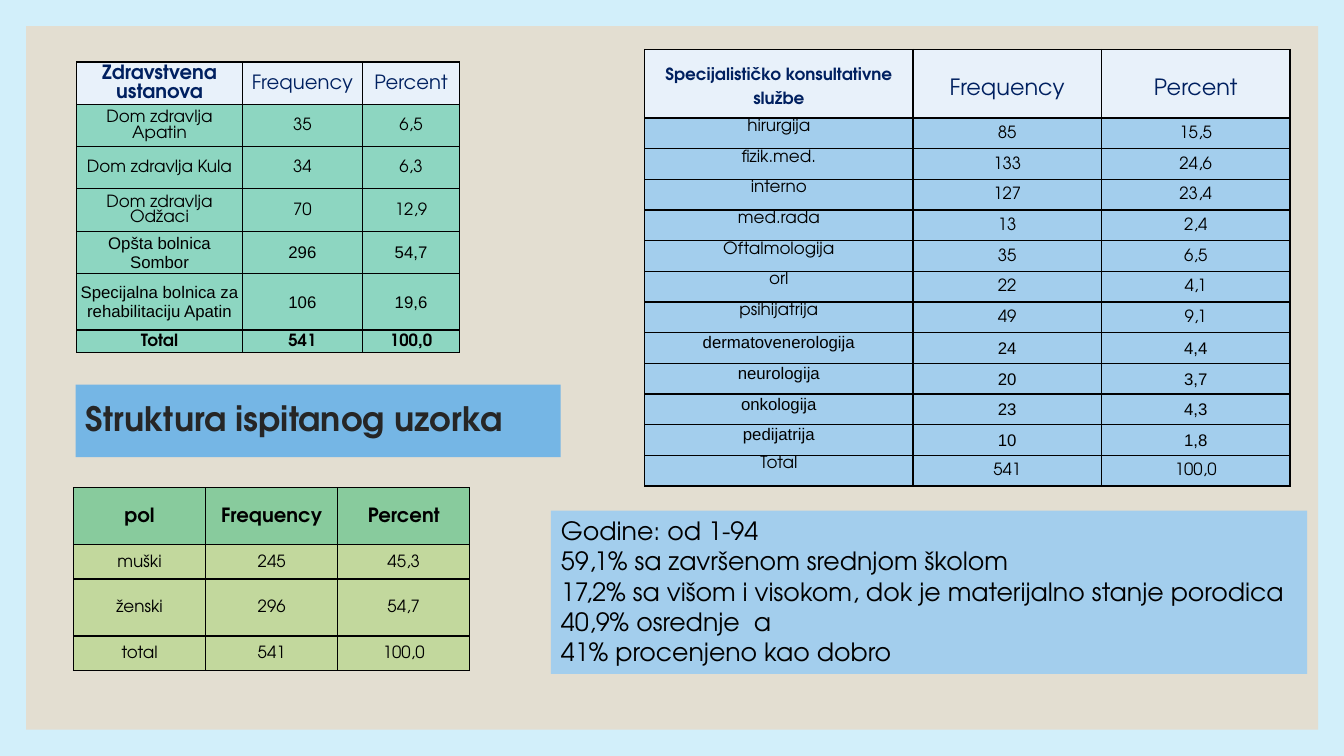
from lxml import etree
from pptx import Presentation
from pptx.dml.color import RGBColor as Rgb
from pptx.enum.shapes import MSO_SHAPE as Shape
from pptx.enum.text import MSO_ANCHOR as Anchor, MSO_AUTO_SIZE as Auto, PP_ALIGN as Align
from pptx.oxml.ns import qn
from pptx.util import Inches, Pt

THEME = {
    "sans": "TeX Gyre Adventor", "plain": "Arial",
    "sky": "D2EFFA", "sand": "E3DED1", "blue": "75B6E5", "pale": "A3CEED",
    "ice": "E8F1FA", "mint": "8DD6C1", "green": "00B050", "lime": "92D050",
    "ink": "000000", "navy": "002060", "dark": "262626",
    "title": 24, "note": 18, "large": 16, "head": 14, "text": 12,
}
STEP = Inches(0.01)
COLS, ROWS = 1333, 750


def area(*steps):
    """Turn counts of grid columns and rows into lengths."""
    return [round(n * STEP) for n in steps]


def write(par, text, size="text", font="sans", color="ink", bold=False, **form):
    """Fill a paragraph with one run; form holds paragraph settings."""
    run = par.add_run()
    run.text = text
    look = {"size": Pt(THEME[size]), "name": THEME[font], "bold": bold}
    for key, value in look.items():
        setattr(run.font, key, value)
    run.font.color.rgb = Rgb.from_string(THEME[color])
    for key, value in form.items():
        setattr(par, key, value)


deck = Presentation()
deck.slide_width, deck.slide_height = area(COLS, ROWS)
slide = deck.slides.add_slide(deck.slide_layouts[5])
shapes = slide.shapes
back = slide.background.fill
back.solid()
back.fore_color.rgb = Rgb.from_string(THEME["sky"])

# Panel behind everything
panel = shapes.add_shape(Shape.RECTANGLE, *area(26, 26, COLS - 51.5, ROWS - 52))
panel.shadow.inherit = False
panel.line.fill.background()
shapes._spTree.insert(2, panel._element)

# Title
title = shapes.title
title.left, title.top, title.width, title.height = area(75, 381.5, 481, 72)
title.text_frame.vertical_anchor = Anchor.MIDDLE
title.text_frame.word_wrap = True
write(title.text_frame.paragraphs[0], "Struktura ispitanog uzorka", "title",
      color="dark", bold=True, alignment=Align.LEFT, line_spacing=0.9)

# Tables: one line of text per row
tables = [
    {"at": (76, 61.5), "cols": [164.5, 119, 96.5], "rows": [42] * 5 + [56, 22.5],
     "fills": ("ice", "mint"), "alpha": None, "ink": "navy",
     "heads": ("head", "head"), "bold": {0}, "total": {6}, "plain": {4, 5},
     "top": False, "lead": 1.0,
     "data": """Zdravstvena ustanova|Frequency|Percent
Dom zdravlja Apatin|35|6,5
Dom zdravlja Kula|34|6,3
Dom zdravlja Odžaci|70|12,9
Opšta bolnica Sombor|296|54,7
Specijalna bolnica za rehabilitaciju Apatin|106|19,6
Total|541|100,0"""},
    {"at": (639.5, 49), "cols": [266, 187, 187], "rows": [68] + [30.45] * 12,
     "fills": ("ice", "pale"), "alpha": None, "ink": "navy",
     "heads": ("text", "large"), "bold": {0}, "total": set(), "plain": {8, 9, 10, 11},
     "top": True, "lead": 1.5,
     "data": """Specijalističko konsultativne službe|Frequency|Percent
hirurgija|85|15,5
fizik.med.|133|24,6
interno|127|23,4
med.rada|13|2,4
Oftalmologija|35|6,5
orl|22|4,1
psihijatrija|49|9,1
dermatovenerologija|24|4,4
neurologija|20|3,7
onkologija|23|4,3
pedijatrija|10|1,8
Total|541|100,0"""},
    {"at": (73, 484), "cols": [131] * 3, "rows": [56.5, 34, 56.5, 34],
     "fills": ("green", "lime"), "alpha": 40, "ink": "ink",
     "heads": ("head", "head"), "bold": {0, 1, 2}, "total": set(), "plain": set(),
     "top": False, "lead": 1.0,
     "data": """pol|Frequency|Percent
muški|245|45,3
ženski|296|54,7
total|541|100,0"""},
]
for plan in tables:
    wides, highs = plan["cols"], plan["rows"]
    frame = shapes.add_table(len(highs), len(wides),
                             *area(*plan["at"], sum(wides), sum(highs)))
    grid = frame.table
    for col, wide in zip(grid.columns, area(*wides)):
        col.width = wide
    for row, high in zip(grid.rows, area(*highs)):
        row.height = high
    for r, line in enumerate(plan["data"].splitlines()):
        for c, text in enumerate(line.split("|")):
            cell = grid.cell(r, c)
            head, first = r == 0, c == 0
            raised = plan["top"] and first and not head
            form = {"margin_left": STEP, "margin_right": STEP,
                    "margin_top": STEP, "margin_bottom": 0,
                    "vertical_anchor": Anchor.TOP if raised else Anchor.MIDDLE}
            for key, value in form.items():
                setattr(cell, key, value)
            cell.fill.solid()
            cell.fill.fore_color.rgb = Rgb.from_string(THEME[plan["fills"][not head]])
            props = cell._tc.get_or_add_tcPr()
            if plan["alpha"]:
                tint = props.find(".//" + qn("a:srgbClr"))
                etree.SubElement(tint, qn("a:alpha"), val=str(plan["alpha"] * 1000))
            for spot, side in enumerate("LRTB"):
                edge = etree.Element(qn("a:ln" + side), w=str(Pt(1)))
                solid = etree.SubElement(edge, qn("a:solidFill"))
                etree.SubElement(solid, qn("a:srgbClr"), val=THEME["ink"])
                props.insert(spot, edge)
            write(cell.text_frame.paragraphs[0], text,
                  plan["heads"][not first] if head else "text",
                  "plain" if r in plan["plain"] else "sans",
                  plan["ink"] if head else "ink",
                  c in plan["bold"] if head else r in plan["total"],
                  alignment=Align.CENTER, line_spacing=plan["lead"] if head else 1.0)

# Note on age and schooling
note = shapes.add_textbox(*area(546.5, 506.5, 750, 162))
note.text_frame.word_wrap = False
note.text_frame.auto_size = Auto.SHAPE_TO_FIT_TEXT
facts = ["Godine: od 1-94", "59,1% sa završenom srednjom školom",
         "17,2% sa višom i visokom, dok je materijalno stanje porodica",
         "40,9% osrednje  a", "41% procenjeno kao dobro"]
for i, fact in enumerate(facts):
    par = note.text_frame.add_paragraph() if i else note.text_frame.paragraphs[0]
    write(par, fact, "note", alignment=Align.LEFT)

for shape, color in ((panel, "sand"), (title, "blue"), (note, "pale")):
    shape.fill.solid()
    shape.fill.fore_color.rgb = Rgb.from_string(THEME[color])

deck.save("out.pptx")
